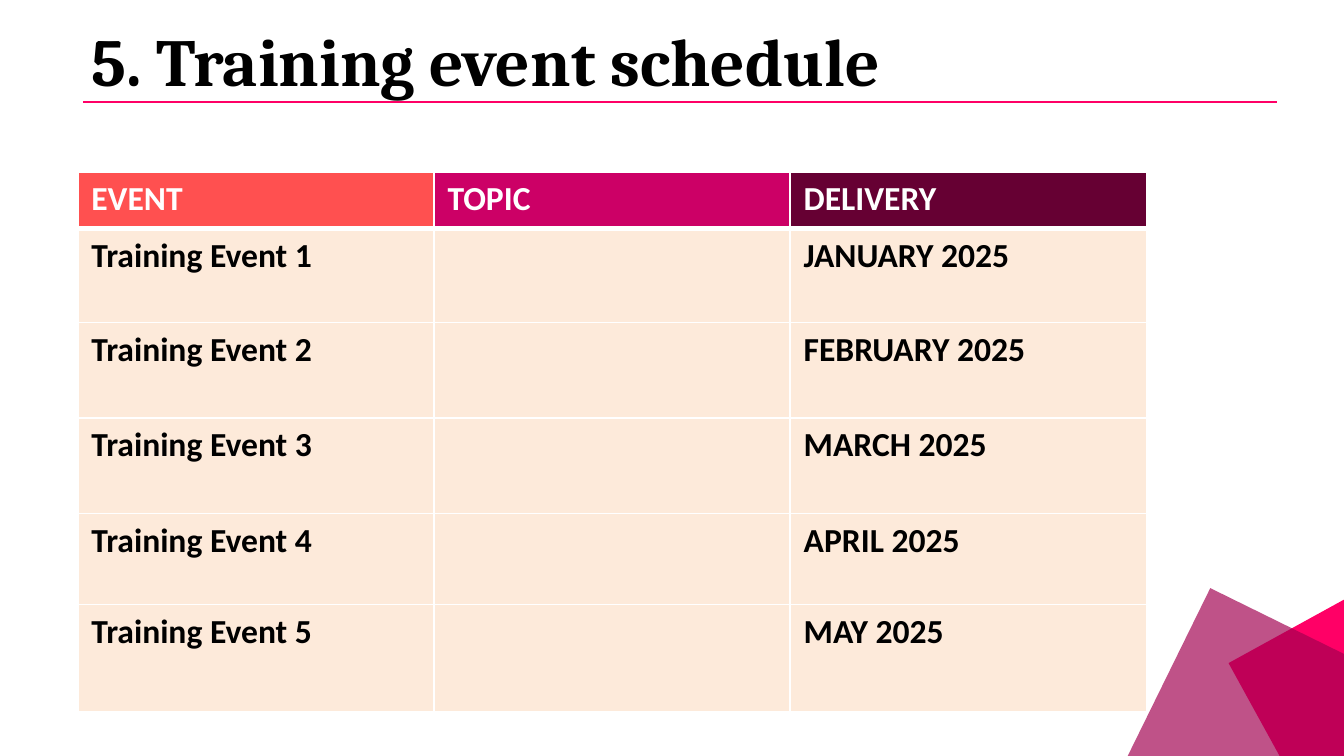
from dataclasses import dataclass

from lxml import etree
from pptx import Presentation
from pptx import util as u
from pptx.dml.color import RGBColor
from pptx.enum import shapes, text
from pptx.oxml.ns import qn


@dataclass(frozen=True)
class Theme:
    heading_font: str = "Cambria"
    body_font: str = "Calibri"
    title_size: int = 36
    table_size: int = 18
    ink: str = "000000"
    white: str = "FFFFFF"
    pink: str = "FF0066"
    plum: str = "A20051"
    headers: tuple = ("FF5050", "CC0066", "660033")
    body_fill: str = "FDEADA"


class SlideBuilder:
    def __init__(self, slide, theme):
        self.slide = slide
        self.theme = theme

    def style(self, paragraph, font_name, size, color):
        font = paragraph.font
        font.name, font.size, font.bold = font_name, u.Pt(size), True
        font.color.rgb = RGBColor.from_string(color)

    def rule(self, left, right, top):
        line = self.slide.shapes.add_connector(
            shapes.MSO_CONNECTOR.STRAIGHT,
            u.Inches(left), u.Inches(top), u.Inches(right), u.Inches(top))
        line.line.color.rgb = RGBColor.from_string(self.theme.pink)
        line.line.width = u.Pt(0.75)
        etree.SubElement(line._element.spPr, qn("a:effectLst"))

    def tilted_square(self, box, rotation, color, opacity=100):
        shape = self.slide.shapes.add_shape(
            shapes.MSO_SHAPE.RECTANGLE, *map(u.Inches, box))
        shape.rotation = rotation
        shape.shadow.inherit = False
        shape.line.fill.background()
        shape.fill.solid()
        shape.fill.fore_color.rgb = RGBColor.from_string(color)
        if opacity < 100:
            color_element = shape._element.spPr.find(".//" + qn("a:srgbClr"))
            etree.SubElement(color_element, qn("a:alpha"), val=str(opacity * 1000))

    def title(self, words, box):
        frame = self.slide.shapes.add_textbox(*map(u.Inches, box)).text_frame
        frame.word_wrap = False
        frame.auto_size = text.MSO_AUTO_SIZE.NONE
        paragraph = frame.paragraphs[0]
        paragraph.text = words
        paragraph.line_spacing = 0.8
        self.style(paragraph, self.theme.heading_font, self.theme.title_size, self.theme.ink)

    def borders(self, cell, top, bottom):
        properties = cell._tc.get_or_add_tcPr()
        widths = {"a:lnL": 1, "a:lnR": 1, "a:lnT": top, "a:lnB": bottom}
        for position, (tag, width) in enumerate(widths.items()):
            line = etree.Element(qn(tag), w=str(u.Pt(width)))
            fill = etree.SubElement(line, qn("a:solidFill"))
            etree.SubElement(fill, qn("a:srgbClr"), val=self.theme.white)
            properties.insert(position, line)

    def table(self, rows, left, top, column_width, row_heights):
        columns = len(rows[0])
        table = self.slide.shapes.add_table(
            len(rows), columns, u.Inches(left), u.Inches(top),
            u.Inches(column_width * columns), u.Inches(sum(row_heights))).table
        for column in table.columns:
            column.width = u.Inches(column_width)
        for r, (row, height) in enumerate(zip(rows, row_heights)):
            table.rows[r].height = u.Inches(height)
            for c, words in enumerate(row):
                cell = table.cell(r, c)
                is_header = r == 0
                fill = self.theme.headers[c] if is_header else self.theme.body_fill
                cell.fill.solid()
                cell.fill.fore_color.rgb = RGBColor.from_string(fill)
                self.borders(cell, top=3 if r == 1 else 1, bottom=3 if is_header else 1)
                paragraph = cell.text_frame.paragraphs[0]
                paragraph.text = words
                self.style(paragraph, self.theme.body_font, self.theme.table_size,
                           self.theme.white if is_header else self.theme.ink)


def main():
    presentation = Presentation()
    presentation.slide_width = u.Inches(10)
    presentation.slide_height = u.Inches(10) * 9 // 16
    slide = presentation.slides.add_slide(presentation.slide_layouts[6])
    theme = Theme()
    builder = SlideBuilder(slide, theme)

    # Rule under the title and corner decoration
    builder.rule(0.62, 9.5, 0.76)
    builder.tilted_square((9.41, 4.48, 1.5, 1.5), 331.2, theme.pink)
    builder.tilted_square((8.63, 4.61, 1.48, 1.54), 296.2, theme.plum, opacity=68)

    # Title
    builder.title("5. Training event schedule", (0.58, 0.21, 7.15, 0.59))

    # Schedule: one event a month
    months = ("JANUARY", "FEBRUARY", "MARCH", "APRIL", "MAY")
    rows = [("EVENT", "TOPIC", "DELIVERY")]
    rows += [(f"Training Event {number}", "", f"{month} 2025")
             for number, month in enumerate(months, 1)]
    builder.table(rows, 0.58, 1.28, 2.65, (0.42, 0.7, 0.71, 0.71, 0.68, 0.8))

    presentation.save("out.pptx")


if __name__ == "__main__":
    main()
